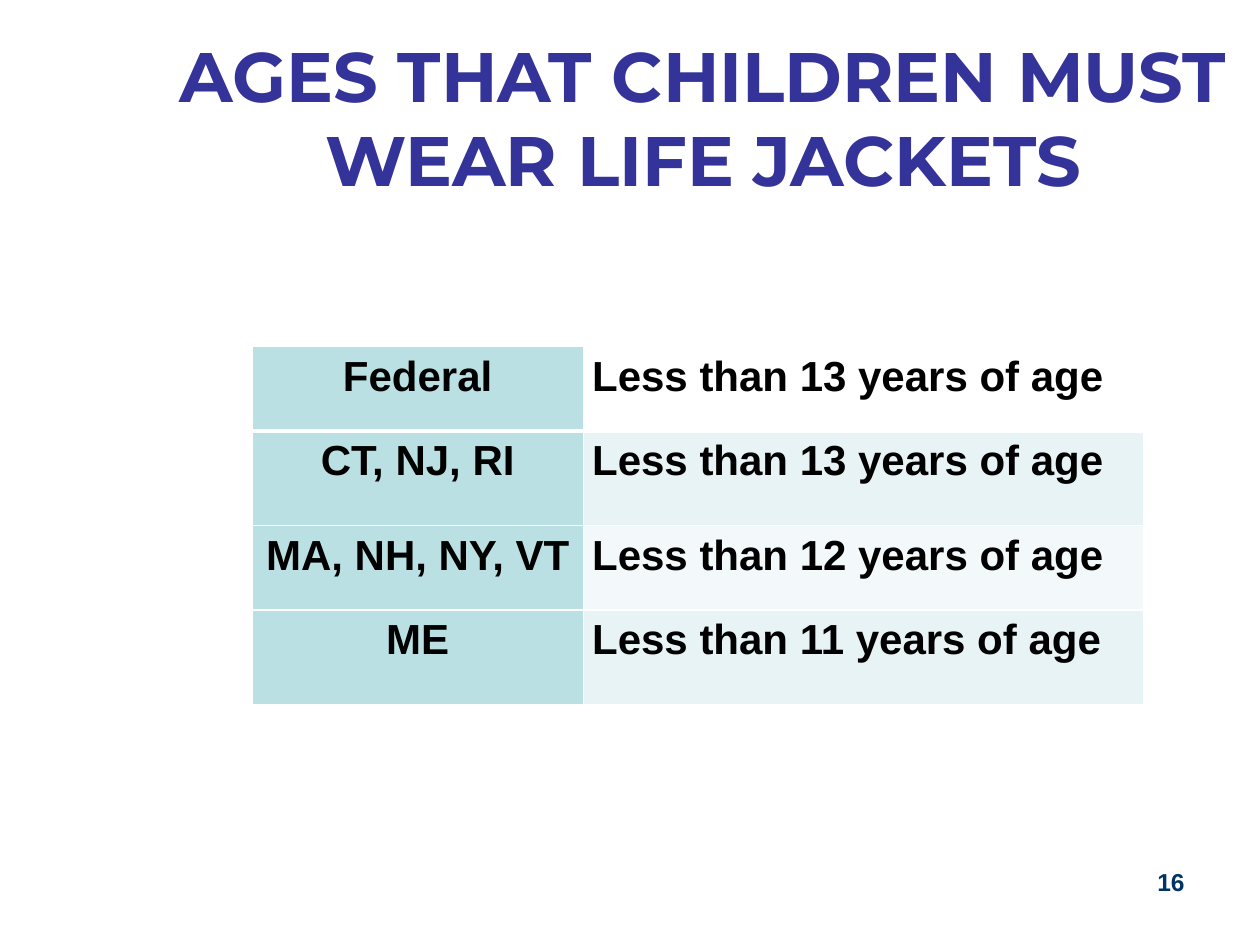
from lxml import etree
from pptx import Presentation
from pptx.dml.color import RGBColor
from pptx.enum.text import MSO_ANCHOR, PP_ALIGN
from pptx.oxml.ns import qn
from pptx.util import Inches, Pt

LEFT, CENTER, RIGHT = PP_ALIGN.LEFT, PP_ALIGN.CENTER, PP_ALIGN.RIGHT
MIDDLE = MSO_ANCHOR.MIDDLE
TITLE_ONLY = 5

COLORS = {
    "title": "333399",
    "number": "003366",
    "text": "000000",
    "border": "FFFFFF",
    "group": "BBE0E3",
    "first": "FFFFFF",
    "odd": "E7F3F4",
    "even": "F3F9FA",
}
AGE_RULES = [
    ("Federal", "Less than 13 years of age"),
    ("CT, NJ, RI", "Less than 13 years of age"),
    ("MA, NH, NY, VT", "Less than 12 years of age"),
    ("ME", "Less than 11 years of age"),
]
AGE_FILLS = ["first", "odd", "even", "odd"]
COLUMN_WIDTHS = [2.63, 4.45]
ROW_HEIGHTS = [0.67, 0.75, 0.67, 0.75]


def write(frame, text, color, size, align, font_name="Arial"):
    frame.word_wrap = True
    para = frame.paragraphs[0]
    para.alignment = align
    span = para.add_run()
    span.text = text
    formats = {"name": font_name, "size": Pt(size), "bold": True}
    for name, value in formats.items():
        setattr(span.font, name, value)
    span.font.color.rgb = RGBColor.from_string(COLORS[color])
    return para


def place(shape, left, top, width, height):
    box = {"left": left, "top": top, "width": width, "height": height}
    for name, value in box.items():
        setattr(shape, name, Inches(value))


def add_title(slide, text):
    title = slide.shapes.title
    place(title, 1.08, 0.3, 9, 1.25)
    title.text_frame.vertical_anchor = MIDDLE
    write(title.text_frame, text, "title", 40, CENTER, "Montserrat")


def add_page_number(slide, number):
    box = slide.shapes.add_textbox(
        Inches(7.17), Inches(6.83), Inches(2.33), Inches(0.52))
    write(box.text_frame, number, "number", 14, RIGHT)


def set_borders(cell, top, bottom):
    """Draw the four cell borders; widths of top and bottom are in points."""
    properties = cell._tc.get_or_add_tcPr()
    for side, width in {"L": 1, "R": 1, "T": top, "B": bottom}.items():
        line = etree.SubElement(properties, qn(f"a:ln{side}"), w=str(Pt(width)))
        fill = etree.SubElement(line, qn("a:solidFill"))
        etree.SubElement(fill, qn("a:srgbClr"), val=COLORS["border"])


def fill_cell(cell, text, fill, align):
    margins = {"margin_left": 0.07, "margin_right": 0.07,
               "margin_top": 0, "margin_bottom": 0}
    for name, value in margins.items():
        setattr(cell, name, Inches(value))
    cell.fill.solid()
    cell.fill.fore_color.rgb = RGBColor.from_string(COLORS[fill])
    write(cell.text_frame, text, "text", 24, align).line_spacing = 1.15


def add_age_table(slide):
    table = slide.shapes.add_table(
        len(ROW_HEIGHTS), len(COLUMN_WIDTHS), Inches(2), Inches(2.75),
        Inches(sum(COLUMN_WIDTHS)), Inches(sum(ROW_HEIGHTS))).table
    for column, width in zip(table.columns, COLUMN_WIDTHS):
        column.width = Inches(width)
    for index, (row, height) in enumerate(zip(table.rows, ROW_HEIGHTS)):
        row.height = Inches(height)
        fills = ("group", AGE_FILLS[index])
        for cell, text, fill, align in zip(
                row.cells, AGE_RULES[index], fills, (CENTER, LEFT)):
            set_borders(cell, top=3 if index == 1 else 1,
                        bottom=3 if index == 0 else 1)
            fill_cell(cell, text, fill, align)


def main():
    deck = Presentation()
    deck.slide_width, deck.slide_height = Inches(10), Inches(7.5)
    slide = deck.slides.add_slide(deck.slide_layouts[TITLE_ONLY])
    add_title(slide, "AGES THAT CHILDREN MUST WEAR LIFE JACKETS")
    add_page_number(slide, "16")
    add_age_table(slide)
    deck.save("out.pptx")


if __name__ == "__main__":
    main()
